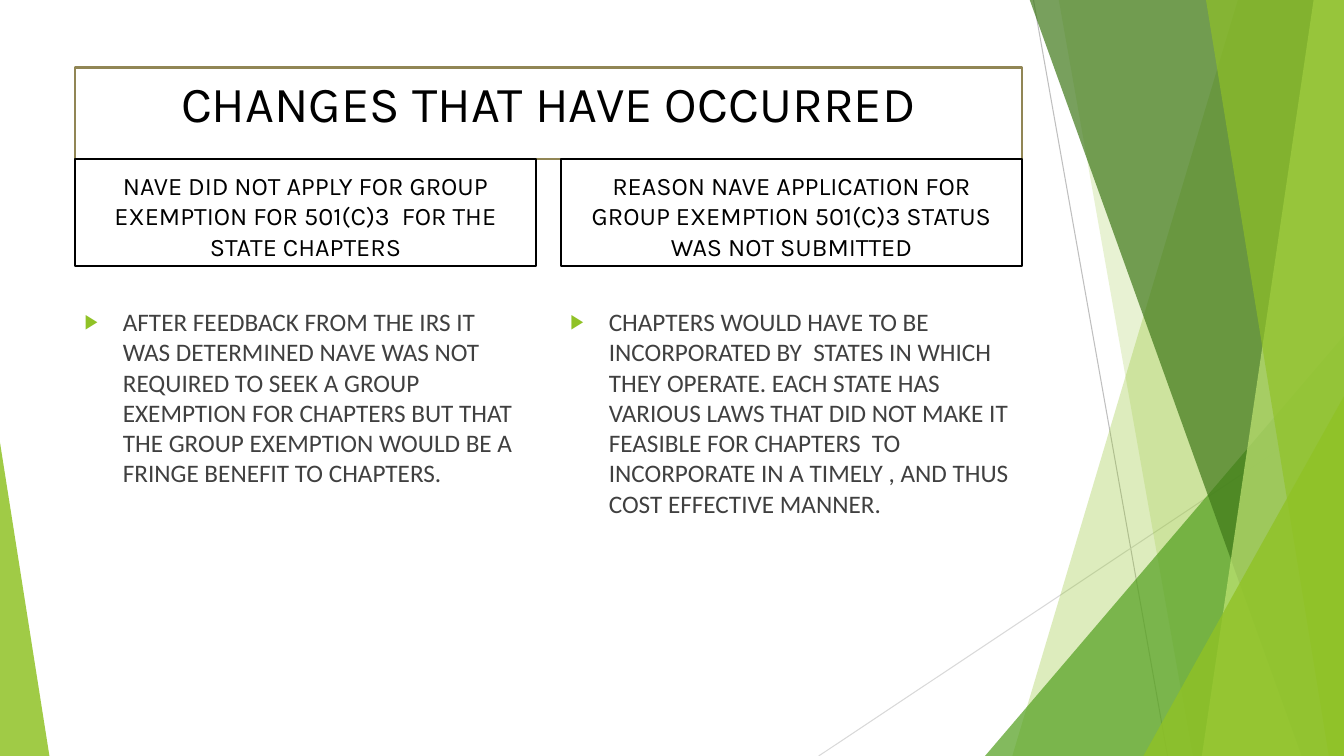
from lxml import etree
from pptx import Presentation
from pptx.dml.color import RGBColor
from pptx.enum import shapes as kinds, text as txt
from pptx.oxml import ns
from pptx.util import Inches, Pt

WHITE = RGBColor(0xFF, 0xFF, 0xFF)
BLACK = RGBColor(0, 0, 0)
GREY = RGBColor(0x40, 0x40, 0x40)
SILVER = RGBColor(0xBF, 0xBF, 0xBF)
PALE = RGBColor(0xD9, 0xD9, 0xD9)
OLIVE = RGBColor(0x91, 0x86, 0x55)
LIME = RGBColor(0x90, 0xC2, 0x26)
LEAF = RGBColor(0x54, 0xA0, 0x21)
FOREST = RGBColor(0x3F, 0x78, 0x19)
MINT = RGBColor(0xC0, 0xE4, 0x74)

WIDE, HIGH = 13.33, 7.5
LEFT, RIGHT, COL = 0.74, 5.56, 4.58

COLUMNS = [
    (LEFT,
     "NAVE DID NOT APPLY FOR GROUP EXEMPTION FOR 501(C)3  FOR THE STATE CHAPTERS",
     "AFTER FEEDBACK FROM THE IRS IT WAS DETERMINED NAVE WAS NOT REQUIRED TO SEEK "
     "A GROUP EXEMPTION FOR CHAPTERS BUT THAT THE GROUP EXEMPTION WOULD BE A "
     "FRINGE BENEFIT TO CHAPTERS."),
    (RIGHT,
     "REASON NAVE APPLICATION FOR GROUP EXEMPTION 501(C)3 STATUS WAS NOT SUBMITTED",
     "CHAPTERS WOULD HAVE TO BE INCORPORATED BY  STATES IN WHICH THEY OPERATE. "
     "EACH STATE HAS VARIOUS LAWS THAT DID NOT MAKE IT FEASIBLE FOR CHAPTERS  TO "
     "INCORPORATE IN A TIMELY , AND THUS COST EFFECTIVE MANNER."),
]


def add(node, tag, **attrs):
    return etree.SubElement(node, ns.qn(tag), **attrs)


def tint(shape, color, alpha):
    shape.shadow.inherit = False
    shape.line.fill.background()
    shape.fill.solid()
    shape.fill.fore_color.rgb = color
    clr = shape.fill._xPr.find(".//" + ns.qn("a:srgbClr"))
    add(clr, "a:alpha", val=str(alpha * 1000))


def strip(slide, top, base, color, alpha):
    form = slide.shapes.build_freeform(Inches(top), Inches(-0.01))
    form.add_line_segments([(Inches(x), Inches(y)) for x, y in
                            ((WIDE, -0.01), (WIDE, HIGH), (base, HIGH))])
    tint(form.convert_to_shape(), color, alpha)


def wedge(slide, x, y, width, peak, color, alpha):
    shape = slide.shapes.add_shape(
        kinds.MSO_SHAPE.ISOSCELES_TRIANGLE,
        Inches(x), Inches(y), Inches(width), Inches(HIGH - y))
    shape.adjustments[0] = peak
    tint(shape, color, alpha)


def rule(slide, x1, y1, x2, y2, color):
    line = slide.shapes.add_connector(
        kinds.MSO_CONNECTOR.STRAIGHT,
        Inches(x1), Inches(y1), Inches(x2), Inches(y2))
    line.line.color.rgb = color
    line.line.width = Pt(0.75)
    add(line._element.spPr, "a:effectLst")


def bullet(para):
    props = para._p.get_or_add_pPr()
    props.set("marL", str(Inches(0.38)))
    props.set("indent", str(Inches(-0.38)))
    add(add(props, "a:buClr"), "a:srgbClr", val=str(LIME))
    add(props, "a:buSzPct", val="80000")
    add(props, "a:buFont", typeface="Calibri")
    add(props, "a:buChar", char="▶")


def write(slide, words, x, y, width, height, size=18, font="Karla", color=BLACK,
          edge=None, align=txt.PP_ALIGN.CENTER, anchor=txt.MSO_ANCHOR.TOP,
          before=10, mark=False):
    box = slide.shapes.add_textbox(Inches(x), Inches(y), Inches(width), Inches(height))
    if edge is not None:
        box.fill.solid()
        box.fill.fore_color.rgb = WHITE
        box.line.color.rgb = edge
        box.line.width = Pt(1.5)
    frame = box.text_frame
    frame.word_wrap = True
    frame.vertical_anchor = anchor
    para = frame.paragraphs[0]
    para.alignment = align
    para.space_before = Pt(before)
    if mark:
        bullet(para)
    run = para.add_run()
    run.text = words
    run.font.size = Pt(size)
    run.font.name = font
    run.font.color.rgb = color


def decor(slide):
    rule(slide, 10.25, 0, 11.58, HIGH, SILVER)
    rule(slide, WIDE, 4.03, 8.12, HIGH, PALE)
    strip(slide, 12.28, 10.04, LIME, 30)
    strip(slide, 10.5, 11.83, LIME, 20)
    wedge(slide, 9.77, 3.33, 3.56, 1, LEAF, 72)
    strip(slide, 10.21, 12.91, FOREST, 70)
    strip(slide, 13.03, 11.92, MINT, 70)
    strip(slide, 11.96, 13.18, LIME, 65)
    wedge(slide, 11.34, 3.93, 1.99, 1, LIME, 80)
    wedge(slide, 0, 4.39, 0.49, 0, LIME, 85)


def main():
    deck = Presentation()
    deck.slide_width, deck.slide_height = Inches(WIDE), Inches(HIGH)
    slide = deck.slides.add_slide(deck.slide_layouts[6])
    decor(slide)
    write(slide, "CHANGES THAT HAVE OCCURRED", LEFT, 0.67, RIGHT + COL - LEFT, 0.91,
          size=36, edge=OLIVE, before=0)
    for x, head, body in COLUMNS:
        write(slide, head, x, 1.58, COL, 1.06, edge=BLACK,
              anchor=txt.MSO_ANCHOR.BOTTOM)
        write(slide, body, x, 2.99, COL, 2.55, font="Calibri", color=GREY,
              align=txt.PP_ALIGN.LEFT, mark=True)
    deck.save("out.pptx")


if __name__ == "__main__":
    main()
